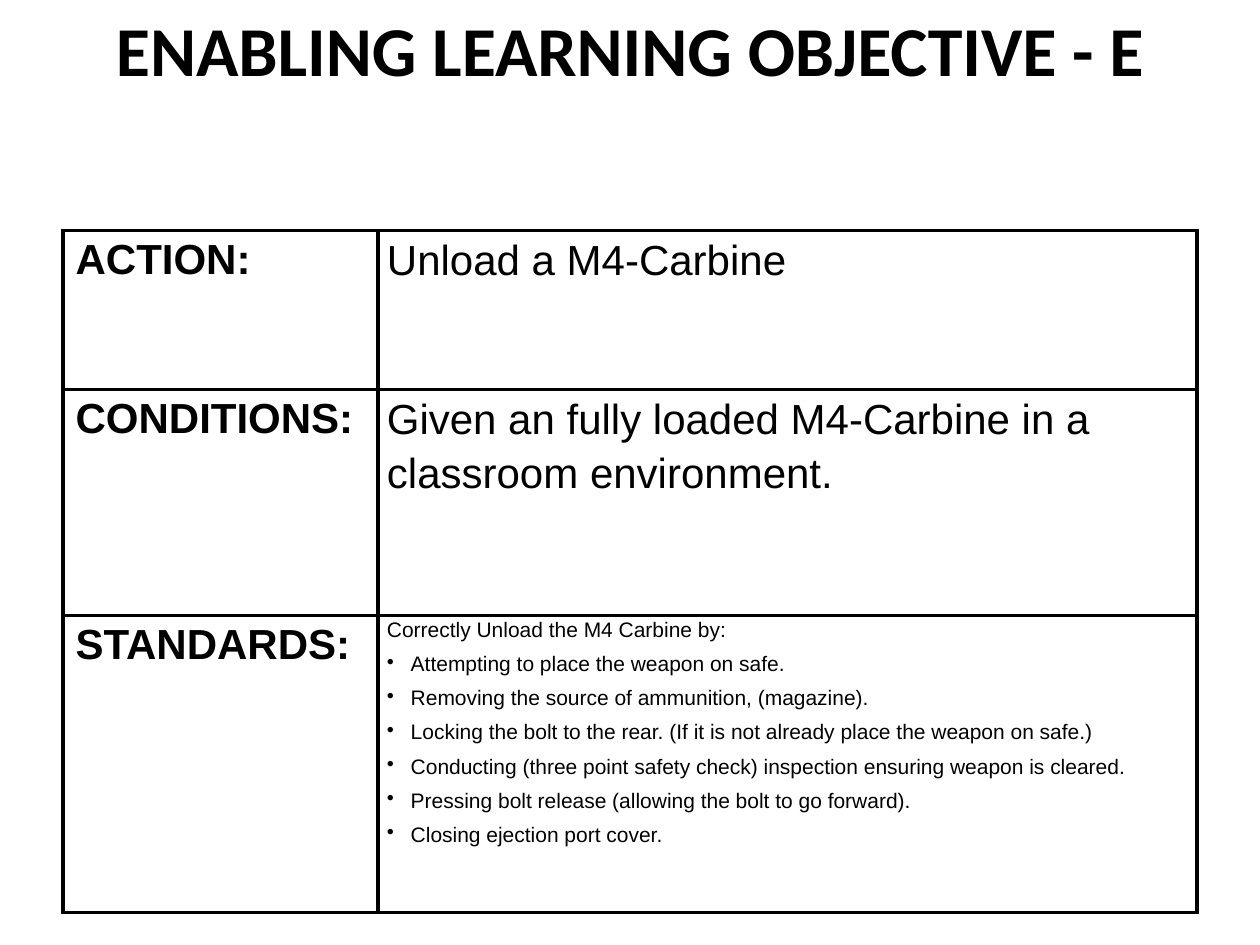
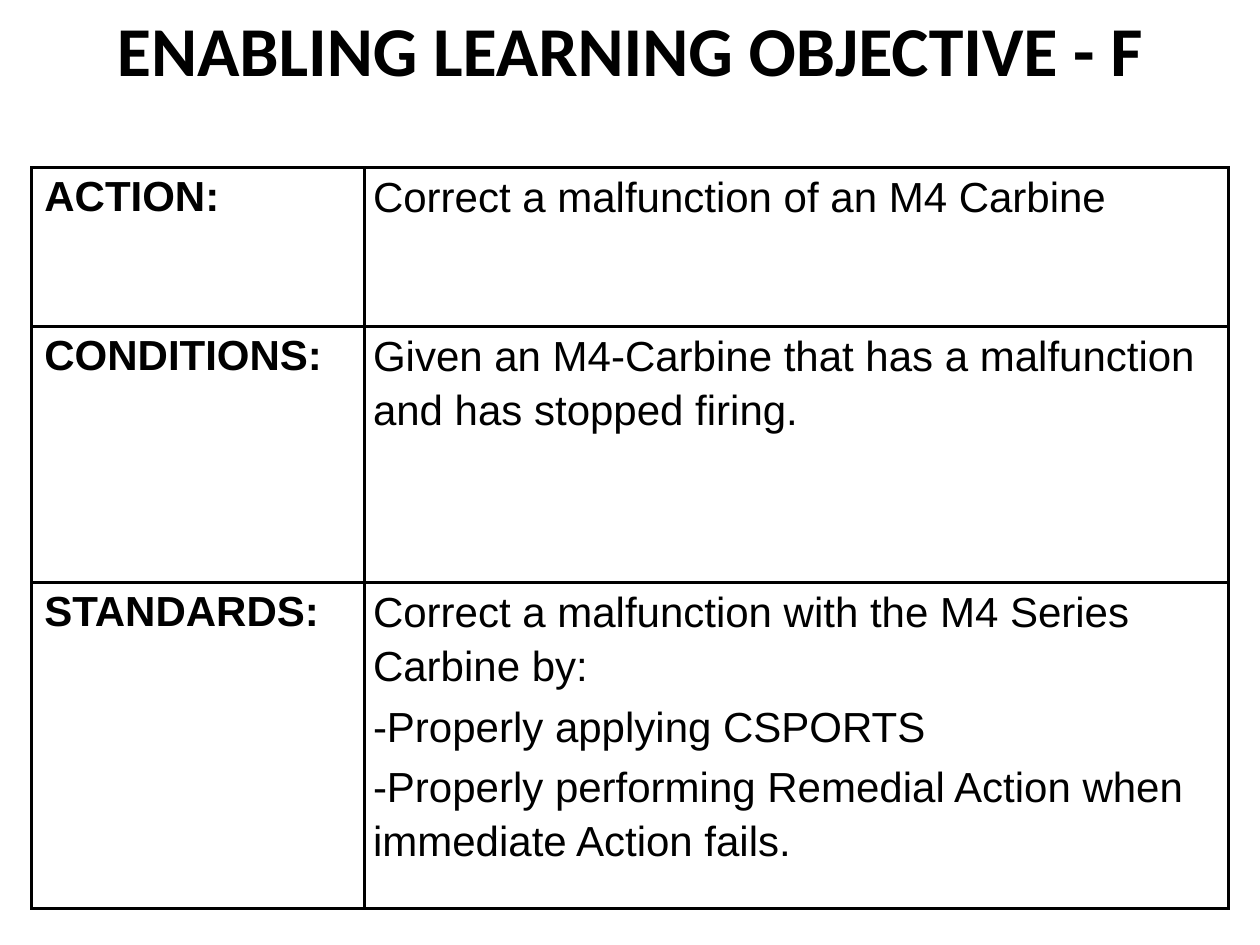
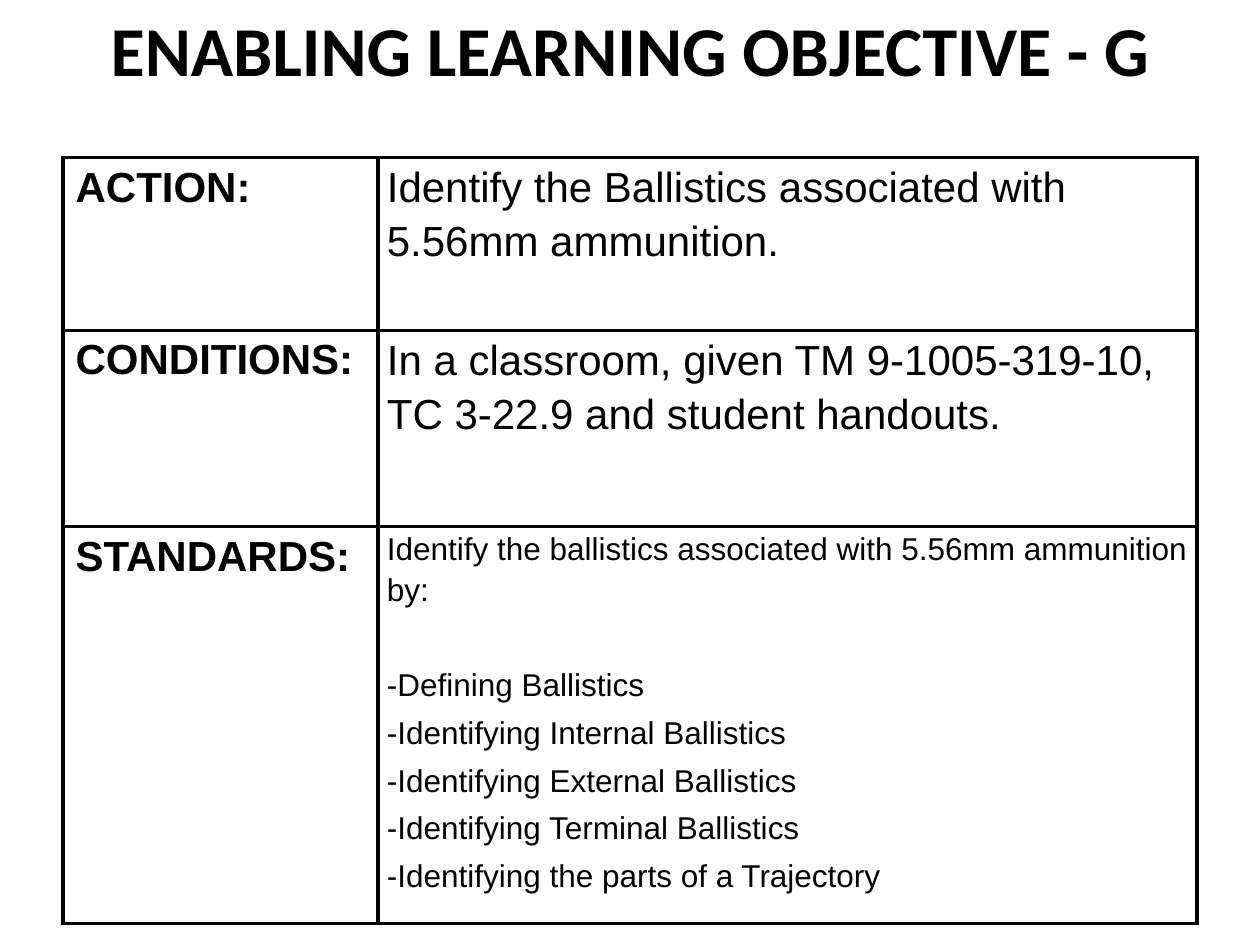
from pptx import Presentation
from pptx.dml.color import RGBColor
from pptx.enum.text import MSO_ANCHOR as Anchor, PP_ALIGN as Align
from pptx.oxml.ns import qn
from pptx.oxml.xmlchemy import OxmlElement as Element
from pptx.util import Cm, Pt

BLACK = "000000"
TITLE_FONT, TABLE_FONT = "Calibri", "Arial"
LABELS = ["ACTION:", "CONDITIONS:", "STANDARDS:"]

OBJECTIVES = [
    dict(
        letter="E", title_height=3.18, left=1.27, top=4.65,
        widths=[6.35, 16.51], heights=[3.2, 4.55, 6],
        action="Unload a M4-Carbine",
        conditions="Given an fully loaded M4-Carbine in a classroom environment.",
        standards=[
            "Correctly Unload the M4 Carbine by:",
            "Attempting to place the weapon on safe.",
            "Removing the source of ammunition, (magazine).",
            "Locking the bolt to the rear. (If it is not already place the weapon on safe.)",
            "Conducting (three point safety check) inspection ensuring weapon is cleared.",
            "Pressing bolt release (allowing the bolt to go forward).",
            "Closing ejection port cover.",
        ],
        standards_size=12, bullet="•", list_gap=2,
    ),
    dict(
        letter="F", title_height=3.18, left=0.64, top=3.38,
        widths=[6.7, 17.43], heights=[3.2, 5.16, 6.58],
        action="Correct a malfunction of an M4 Carbine",
        conditions="Given an M4-Carbine that has a malfunction and has stopped firing.",
        standards=[
            "Correct a malfunction with the M4 Series Carbine by:",
            "-Properly applying CSPORTS",
            "-Properly performing Remedial Action when immediate Action fails.",
        ],
        standards_size=24, bullet=None, list_gap=2,
    ),
    dict(
        letter="G", title_height=2.54, left=1.27, top=3.18,
        widths=[6.35, 16.51], heights=[3.48, 3.96, 8],
        action="Identify the Ballistics associated with 5.56mm ammunition.",
        conditions="In a classroom, given TM 9-1005-319-10, TC 3-22.9 and student handouts.",
        standards=[
            "Identify the ballistics associated with 5.56mm ammunition by:",
            "-Defining Ballistics",
            "-Identifying Internal Ballistics",
            "-Identifying External Ballistics",
            "-Identifying Terminal Ballistics",
            "-Identifying the parts of a Trajectory",
        ],
        standards_size=18, bullet=None, list_gap=29.5,
    ),
]


def write(para, text, size=24, font=TABLE_FONT, bold=False, align=Align.LEFT,
          line=1.0, before=0, after=0, hanging=0, bullet=None):
    """Fill a paragraph with one formatted run; hanging is an indent in cm."""
    properties = para._p.get_or_add_pPr()
    properties.set("marL", str(Cm(hanging)))
    properties.set("indent", str(-Cm(hanging)))
    if bullet:
        mark = Element("a:buChar")
        mark.set("char", bullet)
        properties.append(mark)
    para.alignment = align
    para.line_spacing = line
    para.space_before, para.space_after = Pt(before), Pt(after)
    span = para.add_run()
    span.text = text
    span.font.name, span.font.size, span.font.bold = font, Pt(size), bold
    span.font.color.rgb = RGBColor.from_string(BLACK)


def frame_cell(cell, width=2):
    """Border a cell on all sides, with the width in points, and clear its fill."""
    properties = cell._tc.get_or_add_tcPr()
    for side in ("a:lnL", "a:lnR", "a:lnT", "a:lnB"):
        border = Element(side)
        border.set("w", str(Pt(width)))
        fill = Element("a:solidFill")
        color = Element("a:srgbClr")
        color.set("val", BLACK)
        fill.append(color)
        border.append(fill)
        properties.append(border)
    cell.fill.background()


deck = Presentation()
deck.slide_width, deck.slide_height = Cm(25.4), Cm(19.05)
title_only = deck.slide_layouts.get_by_name("Title Only")

for objective in OBJECTIVES:
    slide = deck.slides.add_slide(title_only)
    title = slide.shapes.title
    title.left, title.top = Cm(1.27), Cm(0)
    title.width, title.height = Cm(22.86), Cm(objective["title_height"])
    title.text_frame.vertical_anchor = Anchor.TOP
    write(title.text_frame.paragraphs[0],
          f"ENABLING LEARNING OBJECTIVE - {objective['letter']}",
          size=40, font=TITLE_FONT, bold=True, align=Align.CENTER)

    widths, heights = objective["widths"], objective["heights"]
    table = slide.shapes.add_table(
        len(heights), len(widths), Cm(objective["left"]), Cm(objective["top"]),
        Cm(sum(widths)), Cm(sum(heights))).table
    table.first_row = table.horz_banding = False
    for column, width in zip(table.columns, widths):
        column.width = Cm(width)

    contents = [[objective["action"]], [objective["conditions"]], objective["standards"]]
    sizes = [24, 24, objective["standards_size"]]
    for row, height, label, lines, size in zip(table.rows, heights, LABELS, contents, sizes):
        row.height = Cm(height)
        label_cell, value_cell = row.cells
        frame_cell(label_cell)
        frame_cell(value_cell)
        write(label_cell.text_frame.paragraphs[0], label, bold=True, hanging=0.97)

        value_cell.margin_left = value_cell.margin_right = Cm(0.18)
        value_cell.margin_top = value_cell.margin_bottom = Cm(0)
        box = value_cell.text_frame
        for index, text in enumerate(lines):
            para = box.add_paragraph() if index else box.paragraphs[0]
            bullet = objective["bullet"] if index else None
            before = (0, objective["list_gap"])[index] if index < 2 else 2
            write(para, text, size=size, line=1.15, before=before, after=2,
                  hanging=0.48 if bullet else 0, bullet=bullet)

deck.save("out.pptx")
